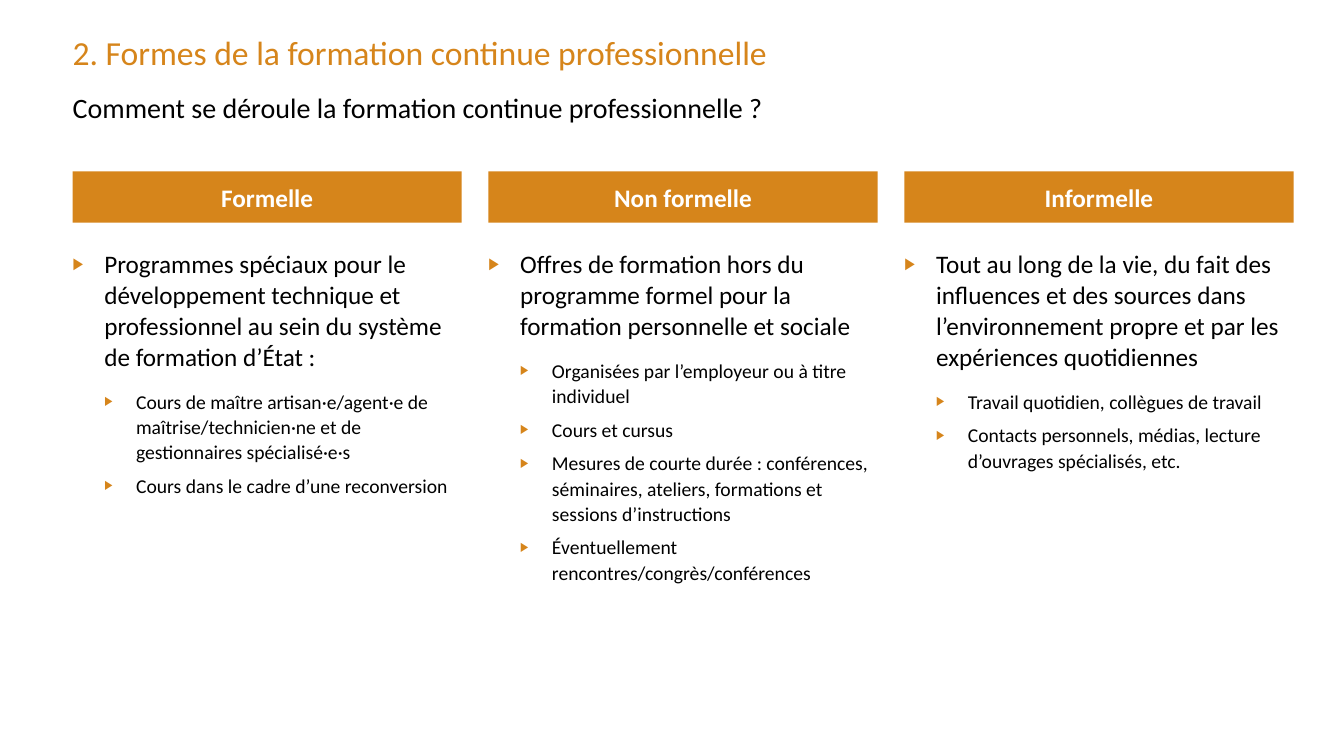
from lxml import etree
from pptx import Presentation
from pptx.dml.color import RGBColor as RGB
from pptx.enum.shapes import MSO_SHAPE as Shape
from pptx.enum.text import MSO_ANCHOR as Anchor, PP_ALIGN as Align
from pptx.oxml.ns import qn
from pptx.util import Inches, Pt

COLORS = {"accent": "D6851B", "text": "000000", "white": "FFFFFF"}
LEFT, WIDTH, STEP = 0.72, 3.86, 4.125
INDENT = 0.315

COLUMNS = [
    ("Formelle",
     "Programmes spéciaux pour le développement technique et professionnel "
     "au sein du système de formation d’État :",
     ["Cours de maître artisan·e/agent·e de maîtrise/technicien·ne et de "
      "gestionnaires spécialisé·e·s",
      "Cours dans le cadre d’une reconversion"]),
    ("Non formelle",
     "Offres de formation hors du programme formel pour la formation "
     "personnelle et sociale",
     ["Organisées par l’employeur ou à titre individuel",
      "Cours et cursus",
      "Mesures de courte durée : conférences, séminaires, ateliers, "
      "formations et sessions d’instructions",
      "Éventuellement rencontres/congrès/conférences"]),
    ("Informelle",
     "Tout au long de la vie, du fait des influences et des sources dans "
     "l’environnement propre et par les expériences quotidiennes",
     ["Travail quotidien, collègues de travail",
      "Contacts personnels, médias, lecture d’ouvrages spécialisés, etc."]),
]

deck = Presentation()
deck.slide_width, deck.slide_height = Inches(13.33), Inches(7.5)
slide = deck.slides.add_slide(deck.slide_layouts[6])


def add_box(left, top, width, height):
    """Add a wrapping text box without margins and return its text frame."""
    box = slide.shapes.add_textbox(
        Inches(left), Inches(top), Inches(width), Inches(height))
    frame = box.text_frame
    frame.word_wrap = True
    frame.margin_left = frame.margin_right = 0
    frame.margin_top = frame.margin_bottom = 0
    return frame


def write(para, text, size, color, level=None):
    """Fill a paragraph; a level gives it a triangle bullet and an indent."""
    para.text = text
    if level is not None:
        para.level = level
        props = para._p.get_or_add_pPr()
        props.set("marL", str(Inches(INDENT * (level + 1))))
        props.set("indent", str(-Inches(INDENT)))
        tint = etree.SubElement(props, qn("a:buClr"))
        etree.SubElement(tint, qn("a:srgbClr"), val=COLORS["accent"])
        etree.SubElement(props, qn("a:buSzPct"), val="65000")
        etree.SubElement(props, qn("a:buFont"), typeface="Arial")
        etree.SubElement(props, qn("a:buChar"), char="▶")
    para.font.name = "Calibri"
    para.font.size = Pt(size)
    para.font.color.rgb = RGB.from_string(COLORS[color])


title = add_box(LEFT, 0.32, 9.84, 0.49)
write(title.paragraphs[0],
      "2. Formes de la formation continue professionnelle", 24, "accent")
question = add_box(LEFT, 0.9, 12.09, 0.48)
write(question.paragraphs[0],
      "Comment se déroule la formation continue professionnelle ?", 20, "text")

for index, (name, summary, points) in enumerate(COLUMNS):
    left = LEFT + index * STEP

    header = slide.shapes.add_shape(
        Shape.RECTANGLE, Inches(left), Inches(1.7), Inches(WIDTH), Inches(0.51))
    header.shadow.inherit = False
    header.fill.solid()
    header.fill.fore_color.rgb = RGB.from_string(COLORS["accent"])
    header.line.fill.background()
    frame = header.text_frame
    frame.vertical_anchor = Anchor.MIDDLE
    frame.margin_left = frame.margin_right = Inches(0.04)
    frame.margin_top, frame.margin_bottom = Inches(0.08), 0
    label = frame.paragraphs[0]
    write(label, name, 18, "white")
    label.font.bold = True
    label.alignment = Align.CENTER
    label.line_spacing = Pt(17)

    body = add_box(left, 2.46, WIDTH, 4.03)
    lead = body.paragraphs[0]
    write(lead, summary, 18, "text", level=0)
    lead.line_spacing = Pt(22)
    lead.space_after = Pt(6)
    for point in points:
        para = body.add_paragraph()
        write(para, point, 14, "text", level=1)
        para.line_spacing = Pt(18)
        para.space_before = Pt(6)

deck.save("out.pptx")
